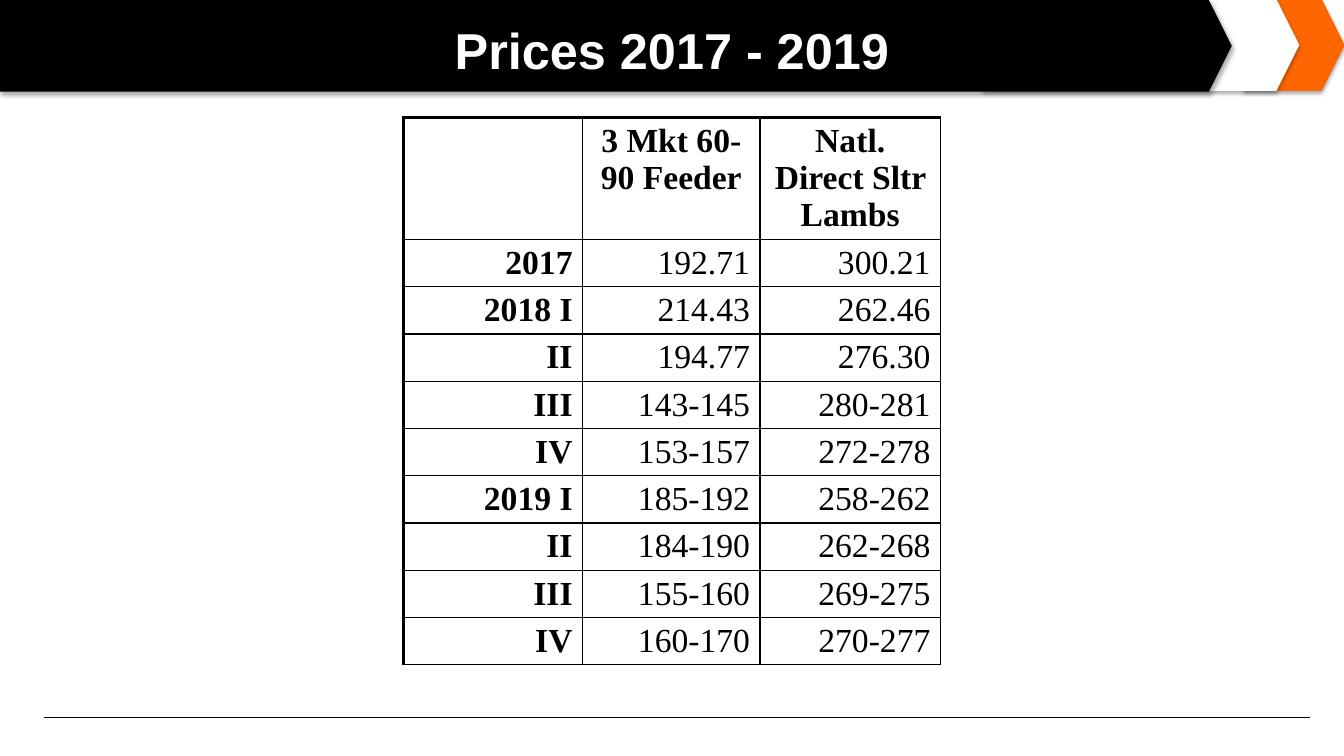
from dataclasses import dataclass

from lxml import etree
from pptx import Presentation, util as u
from pptx.dml.color import RGBColor
from pptx.enum import shapes, text
from pptx.oxml import ns


@dataclass(frozen=True)
class Theme:
    black: str = "000000"
    white: str = "FFFFFF"
    orange: str = "FF6600"
    title_font: str = "Arial"
    table_font: str = "Times New Roman"
    title_size: float = 36
    table_size: float = 24
    rule: float = 0.75
    thin: float = 1
    thick: float = 2.25


class SlideBuilder:
    columns, rows = 160, 90

    def __init__(self, presentation, theme):
        self.theme = theme
        self.column = presentation.slide_width / self.columns
        self.row = presentation.slide_height / self.rows
        self.slide = presentation.slides.add_slide(presentation.slide_layouts[5])
        self.slide.background.fill.solid()
        self.slide.background.fill.fore_color.rgb = RGBColor.from_string(theme.white)

    def place(self, left, top, width, height):
        return [round(left * self.column), round(top * self.row),
                round(width * self.column), round(height * self.row)]

    def add_words(self, paragraph, words, font, size, color, bold, align):
        paragraph.alignment = align
        run = paragraph.add_run()
        run.text = words
        run.font.name = font
        run.font.size = u.Pt(size)
        run.font.bold = bold
        run.font.color.rgb = RGBColor.from_string(color)

    def band(self, left, top, width, height, color):
        shape = self.slide.shapes.add_shape(
            shapes.MSO_SHAPE.PENTAGON, *self.place(left, top, width, height))
        shape.adjustments[0] = 0.25
        shape.fill.solid()
        shape.fill.fore_color.rgb = RGBColor.from_string(color)
        shape.line.fill.background()
        shape.shadow.inherit = False
        effects = shape._element.spPr.find(ns.qn("a:effectLst"))
        shadow = etree.SubElement(
            effects, ns.qn("a:outerShdw"), blurRad=str(u.Pt(3.1)),
            dist=str(u.Pt(1.8)), dir="5400000", algn="t", rotWithShape="0")
        tint = etree.SubElement(shadow, ns.qn("a:srgbClr"), val=self.theme.black)
        etree.SubElement(tint, ns.qn("a:alpha"), val="35000")

    def rule(self, left, right, top):
        start, level, end, _ = self.place(left, top, right, 0)
        connector = self.slide.shapes.add_connector(
            shapes.MSO_CONNECTOR.STRAIGHT, start, level, end, level)
        connector.line.color.rgb = RGBColor.from_string(self.theme.black)
        connector.line.width = u.Pt(self.theme.rule)
        etree.SubElement(connector._element.spPr, ns.qn("a:effectLst"))

    def title(self, words, left, top, width, height):
        theme, title = self.theme, self.slide.shapes.title
        title.left, title.top, title.width, title.height = self.place(
            left, top, width, height)
        title._element.getparent().append(title._element)
        title.text_frame.vertical_anchor = text.MSO_ANCHOR.MIDDLE
        self.add_words(title.text_frame.paragraphs[0], words, theme.title_font,
                       theme.title_size, theme.white, True, text.PP_ALIGN.CENTER)

    def border(self, cell, side, width):
        line = etree.SubElement(cell._tc.get_or_add_tcPr(), ns.qn(f"a:ln{side}"),
                                w=str(u.Pt(width)))
        fill = etree.SubElement(line, ns.qn("a:solidFill"))
        etree.SubElement(fill, ns.qn("a:srgbClr"), val=self.theme.black)

    def table(self, records, left, top, widths, heights):
        theme = self.theme
        table = self.slide.shapes.add_table(
            len(records), len(widths),
            *self.place(left, top, sum(widths), sum(heights))).table
        table.first_row = table.horz_banding = False
        for column, width in zip(table.columns, widths):
            column.width = round(width * self.column)
        for row, height in zip(table.rows, heights):
            row.height = round(height * self.row)
        for r, record in enumerate(records):
            for c, words in enumerate(record):
                cell = table.cell(r, c)
                cell.margin_left = cell.margin_right = u.Inches(0.1)
                cell.margin_top = cell.margin_bottom = u.Inches(0.05)
                edges = {"L": c == 0, "R": False, "T": r == 0, "B": False}
                for side, outer in edges.items():
                    self.border(cell, side, theme.thick if outer else theme.thin)
                cell.fill.background()
                if words:
                    align = text.PP_ALIGN.RIGHT if r else text.PP_ALIGN.CENTER
                    self.add_words(cell.text_frame.paragraphs[0], words,
                                   theme.table_font, theme.table_size, theme.black,
                                   r == 0 or c == 0, align)


PRICES = [
    ("", "3 Mkt 60-90 Feeder", "Natl. Direct Sltr Lambs"),
    ("2017", "192.71", "300.21"),
    ("2018 I", "214.43", "262.46"),
    ("II", "194.77", "276.30"),
    ("III", "143-145", "280-281"),
    ("IV", "153-157", "272-278"),
    ("2019 I", "185-192", "258-262"),
    ("II", "184-190", "262-268"),
    ("III", "155-160", "269-275"),
    ("IV", "160-170", "270-277"),
]


def main():
    presentation = Presentation()
    presentation.slide_width = u.Inches(13.33)
    presentation.slide_height = u.Inches(7.5)
    theme = Theme()
    builder = SlideBuilder(presentation, theme)
    builder.band(148.08, -0.1, 12, 10.92, theme.orange)
    builder.band(117, -0.1, 37.68, 10.92, theme.white)
    builder.rule(5.3, 156, 85.4)
    builder.band(0, 0, 146.64, 10.92, theme.black)
    builder.title("Prices 2017 - 2019", 8, 1.7, 144, 8.3)
    builder.table(PRICES, 48, 14, [21.36, 21.12, 21.48],
                  [14.5] + [5.63] * (len(PRICES) - 1))
    presentation.save("out.pptx")


if __name__ == "__main__":
    main()
